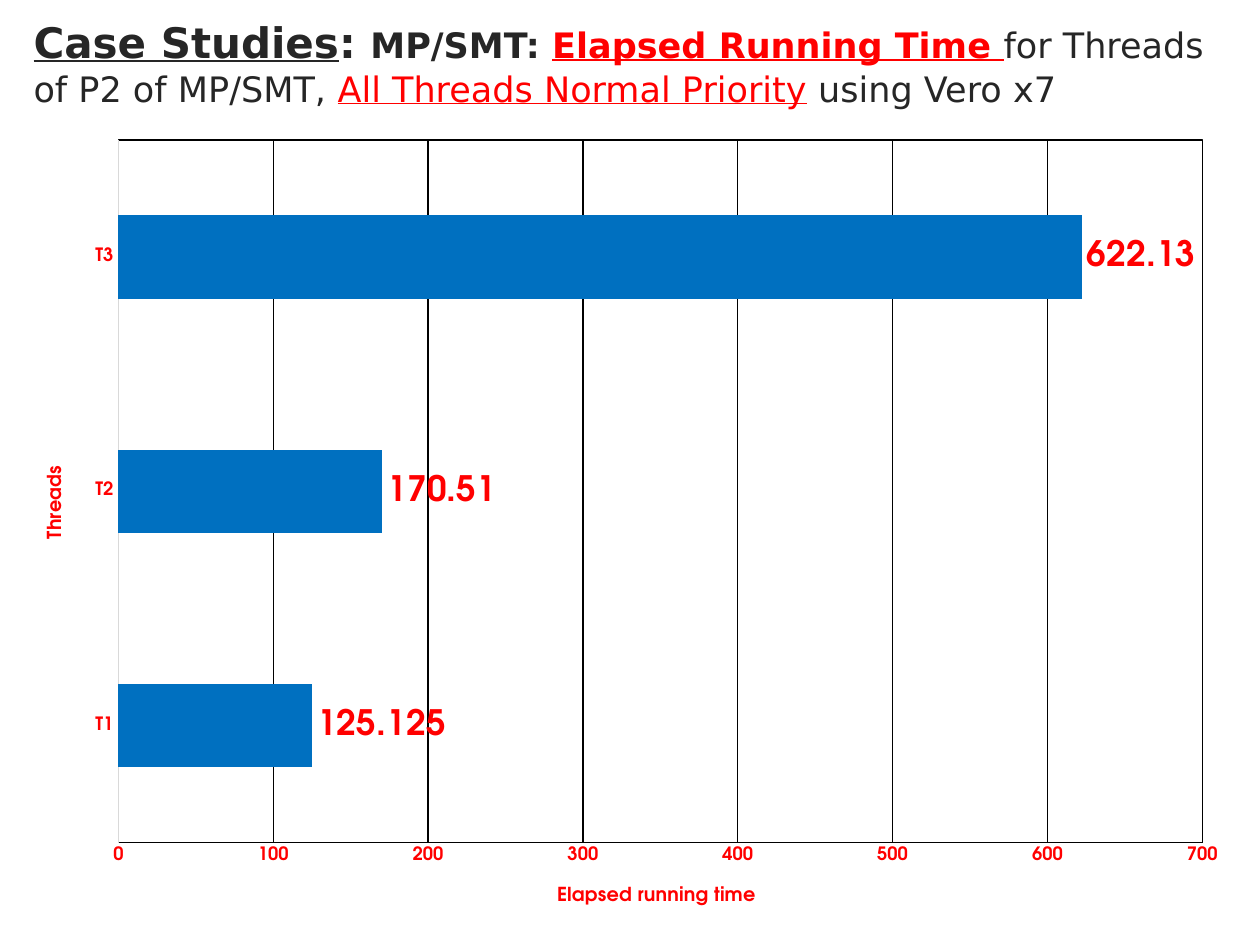
from typing import NamedTuple

from lxml.etree import SubElement
from pptx import Presentation
from pptx.chart.data import CategoryChartData
from pptx.dml.color import RGBColor
from pptx.enum.chart import XL_CHART_TYPE as Kind
from pptx.enum.chart import XL_LABEL_POSITION as Place
from pptx.enum.chart import XL_TICK_MARK as Tick
from pptx.enum.text import MSO_ANCHOR as Anchor
from pptx.enum.text import PP_ALIGN as Align
from pptx.oxml import parse_xml
from pptx.oxml.ns import nsdecls, qn
from pptx.util import Pt

HEX = {"ink": "262626", "red": "FF0000", "bar": "0070C0",
       "grid": "000000", "axis": "D9D9D9"}
HEAD = "DejaVu Sans"
FACE = "TeX Gyre Adventor"


class Part(NamedTuple):
    text: str
    size: int = 20
    color: str = "ink"
    bold: bool = False
    under: bool = False


PARTS = [
    Part("Case Studies", 24, bold=True, under=True),
    Part(": ", 24, bold=True),
    Part("MP/SMT: ", bold=True),
    Part("Elapsed Running Time ", color="red", bold=True, under=True),
    Part("for Threads of P2 of MP/SMT, "),
    Part("All Threads Normal Priority", color="red", under=True),
    Part(" using Vero x7"),
]
TIMES = {"T1": 125.125, "T2": 170.51, "T3": 622.13}


def rgb(name: str) -> RGBColor:
    return RGBColor.from_string(HEX[name])


def style(font, size: float, color: str = "red", bold: bool = True,
          face: str = FACE) -> None:
    font.name, font.size, font.bold = face, Pt(size), bold
    font.color.rgb = rgb(color)


def stroke(line, color: str) -> None:
    line.color.rgb = rgb(color)
    line.width = Pt(0.75)


def set_axis(axis, title: str) -> None:
    axis.major_tick_mark = axis.minor_tick_mark = Tick.NONE
    style(axis.tick_labels.font, 10.5)
    para = axis.axis_title.text_frame.paragraphs[0]
    para.text = title
    style(para.font, 11)


def set_plot(chart, x: float, y: float, w: float, h: float) -> None:
    """Fix the inner plot area and give it a thin border."""
    area = chart._chartSpace.chart.plotArea
    for old in area.findall(qn("c:layout")):
        area.remove(old)
    layout = parse_xml(f"<c:layout {nsdecls('c')}/>")
    manual = SubElement(layout, qn("c:manualLayout"))
    rules = {"layoutTarget": "inner", "xMode": "edge", "yMode": "edge",
             "x": x, "y": y, "w": w, "h": h}
    for tag, val in rules.items():
        SubElement(manual, qn(f"c:{tag}")).set("val", str(val))
    area.insert(0, layout)
    area.append(parse_xml(
        f'<c:spPr {nsdecls("c", "a")}><a:noFill/><a:ln w="{Pt(0.75)}">'
        f'<a:solidFill><a:srgbClr val="{HEX["grid"]}"/></a:solidFill>'
        "</a:ln></c:spPr>"))


def add_title(slide) -> None:
    box = slide.shapes.title
    box.left, box.top, box.width, box.height = Pt(12), Pt(6), Pt(690), Pt(60)
    frame = box.text_frame
    frame.word_wrap = True
    frame.vertical_anchor = Anchor.MIDDLE
    para = frame.paragraphs[0]
    para.alignment = Align.LEFT
    para.line_spacing = 1.0
    para.space_before = Pt(0)
    for part in PARTS:
        run = para.add_run()
        run.text = part.text
        style(run.font, part.size, part.color, part.bold, HEAD)
        run.font.underline = part.under


def add_bars(slide) -> None:
    data = CategoryChartData()
    data.categories = list(TIMES)
    data.add_series("Series 1", list(TIMES.values()))
    chart = slide.shapes.add_chart(
        Kind.BAR_CLUSTERED, Pt(12), Pt(66), Pt(696), Pt(467), data).chart
    chart.has_title = chart.has_legend = False
    style(chart.font, 10, "grid", False)

    # Axes
    cats, vals = chart.category_axis, chart.value_axis
    set_axis(cats, "Threads")
    stroke(cats.format.line, "axis")
    set_axis(vals, "Elapsed running time")
    vals.format.line.fill.background()
    vals.minimum_scale, vals.maximum_scale, vals.major_unit = 0, 700, 100
    vals.has_major_gridlines = True
    stroke(vals.major_gridlines.format.line, "grid")

    # Bars and their values
    plot = chart.plots[0]
    plot.gap_width = 182
    plot.vary_by_categories = False
    bars = plot.series[0]
    bars.format.fill.solid()
    bars.format.fill.fore_color.rgb = rgb("bar")
    labels = bars.data_labels
    labels.show_value = True
    labels.position = Place.OUTSIDE_END
    style(labels.font, 20)

    set_plot(chart, 0.08, 0.03, 0.89, 0.86)


def main() -> None:
    deck = Presentation()
    deck.slide_width, deck.slide_height = Pt(720), Pt(540)
    slide = deck.slides.add_slide(deck.slide_layouts[5])
    add_title(slide)
    add_bars(slide)
    deck.save("out.pptx")


if __name__ == "__main__":
    main()
